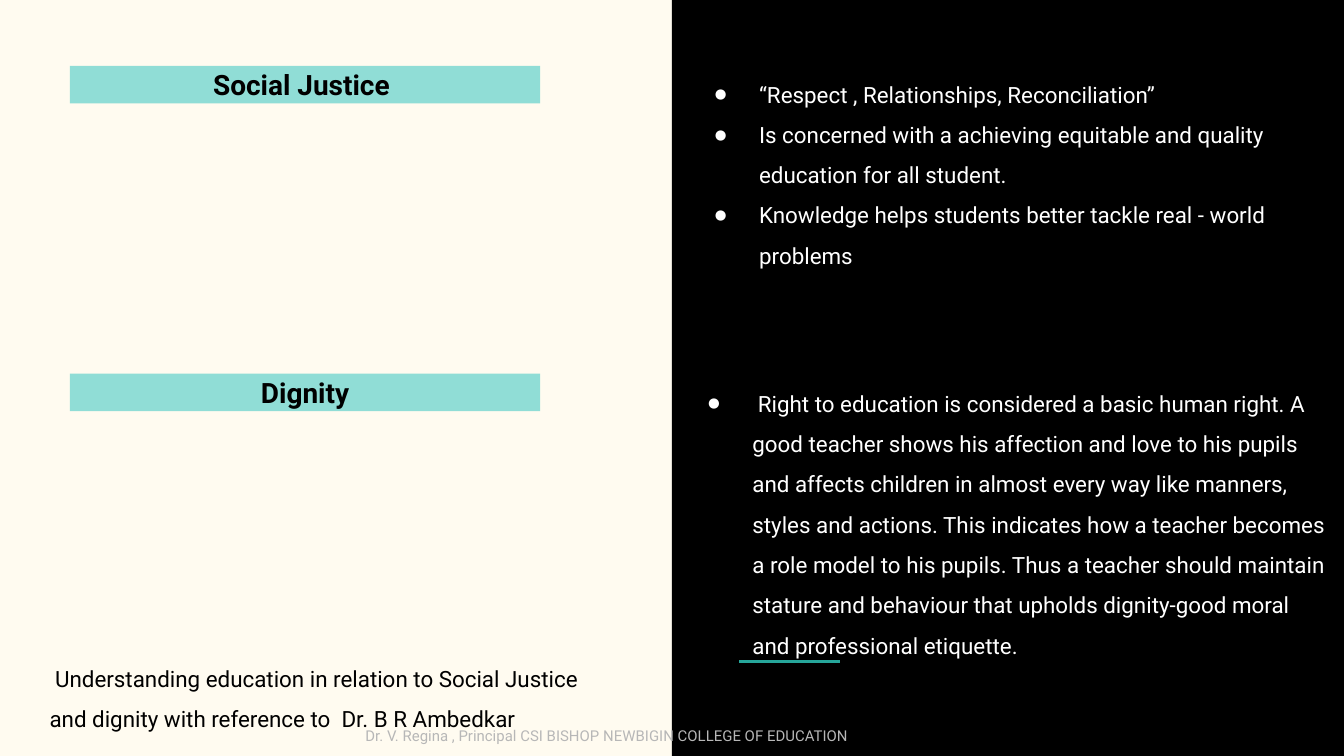
"""Build a slide on social justice and dignity in education."""
from lxml import etree
from pptx import Presentation
from pptx import util as u
from pptx.dml.color import RGBColor
from pptx.enum import shapes, text
from pptx.oxml import ns

CREAM = RGBColor(0xFF, 0xFB, 0xF0)
BLACK = RGBColor(0, 0, 0)
WHITE = RGBColor(0xFF, 0xFF, 0xFF)
AQUA = RGBColor(0x90, 0xDD, 0xD6)
TEAL = RGBColor(0x26, 0xA6, 0x9A)
GREY = RGBColor(0xB7, 0xB7, 0xB7)


def add_block(kind, box, fill=None):
    left, top, width, height = map(u.Inches, box)
    if kind is None:
        return slide.shapes.add_textbox(left, top, width, height)
    block = slide.shapes.add_shape(kind, left, top, width, height)
    block.shadow.inherit = False
    block.fill.solid()
    block.fill.fore_color.rgb = fill
    block.line.fill.background()
    return block


def write(block, *lines, size=12, color=BLACK, bold=False, spacing=None, bullet=None,
          align=text.PP_ALIGN.LEFT, anchor=text.MSO_ANCHOR.TOP,
          fit=text.MSO_AUTO_SIZE.NONE):
    frame = block.text_frame
    frame.word_wrap = True
    frame.auto_size = fit
    frame.vertical_anchor = anchor
    frame.margin_left = frame.margin_right = u.Inches(0.1)
    frame.margin_top = frame.margin_bottom = u.Inches(0.1)
    for index, line in enumerate(lines):
        paragraph = frame.add_paragraph() if index else frame.paragraphs[0]
        paragraph.alignment = align
        paragraph.line_spacing = spacing
        run = paragraph.add_run()
        run.text = line
        run.font.name = "Roboto"
        run.font.size = u.Pt(size)
        run.font.bold = bold
        run.font.color.rgb = color
        if bullet:
            props = paragraph._p.get_or_add_pPr()
            props.set("marL", str(u.Inches(0.5)))
            props.set("indent", str(u.Inches(-0.33)))
            tint = etree.SubElement(props, ns.qn("a:buClr"))
            etree.SubElement(tint, ns.qn("a:srgbClr"), val=str(color))
            etree.SubElement(props, ns.qn("a:buSzPct"), val="60000")
            etree.SubElement(props, ns.qn("a:buFont"), typeface="Roboto")
            etree.SubElement(props, ns.qn("a:buChar"), char=bullet)


deck = Presentation()
deck.slide_width = u.Inches(10)
deck.slide_height = deck.slide_width * 9 // 16
slide = deck.slides.add_slide(deck.slide_layouts[6])
slide.background.fill.solid()
slide.background.fill.fore_color.rgb = CREAM

panel = add_block(shapes.MSO_SHAPE.RECTANGLE, (5, 0, 5, 5.62), BLACK)
panel.height = deck.slide_height
accent = slide.shapes.add_connector(
    shapes.MSO_CONNECTOR.STRAIGHT,
    u.Inches(5.5), u.Inches(4.92), u.Inches(6.25), u.Inches(4.92))
accent.line.color.rgb = TEAL
accent.line.width = u.Pt(1.5)
etree.SubElement(accent._element.spPr, ns.qn("a:effectLst"))

for top, heading in ((0.49, "Social Justice "), (2.78, "Dignity")):
    banner = add_block(shapes.MSO_SHAPE.RECTANGLE, (0.52, top, 3.5, 0.28), AQUA)
    write(banner, heading, size=15, bold=True,
          align=text.PP_ALIGN.CENTER, anchor=text.MSO_ANCHOR.MIDDLE)

justice_points = (
    "“Respect , Relationships, Reconciliation”",
    "Is concerned with a achieving equitable and quality education for all student.",
    "Knowledge helps students better tackle real - world problems",
)
dignity_points = (
    " Right to education is considered a basic human right. A good teacher shows his "
    "affection and love to his pupils and affects children in almost every way like "
    "manners, styles and actions. This indicates how a teacher becomes a role model to "
    "his pupils. Thus a teacher should maintain stature and behaviour that upholds "
    "dignity-good moral and professional etiquette.",
)
for box, points in (((5.05, 0.4, 5, 1.59), justice_points),
                    ((5, 2.7, 5, 2.21), dignity_points)):
    write(add_block(None, box), *points, color=WHITE, spacing=1.5, bullet="●")

write(add_block(None, (0.27, 4.75, 4.15, 0.58)),
      " Understanding education in relation to Social Justice and dignity "
      "with reference to  Dr. B R Ambedkar", spacing=1.5)
write(add_block(None, (2.62, 5.34, 5.45, 0.28)),
      "Dr. V. Regina , Principal CSI BISHOP NEWBIGIN COLLEGE OF EDUCATION",
      size=8, color=GREY, fit=text.MSO_AUTO_SIZE.SHAPE_TO_FIT_TEXT)

deck.save("out.pptx")
